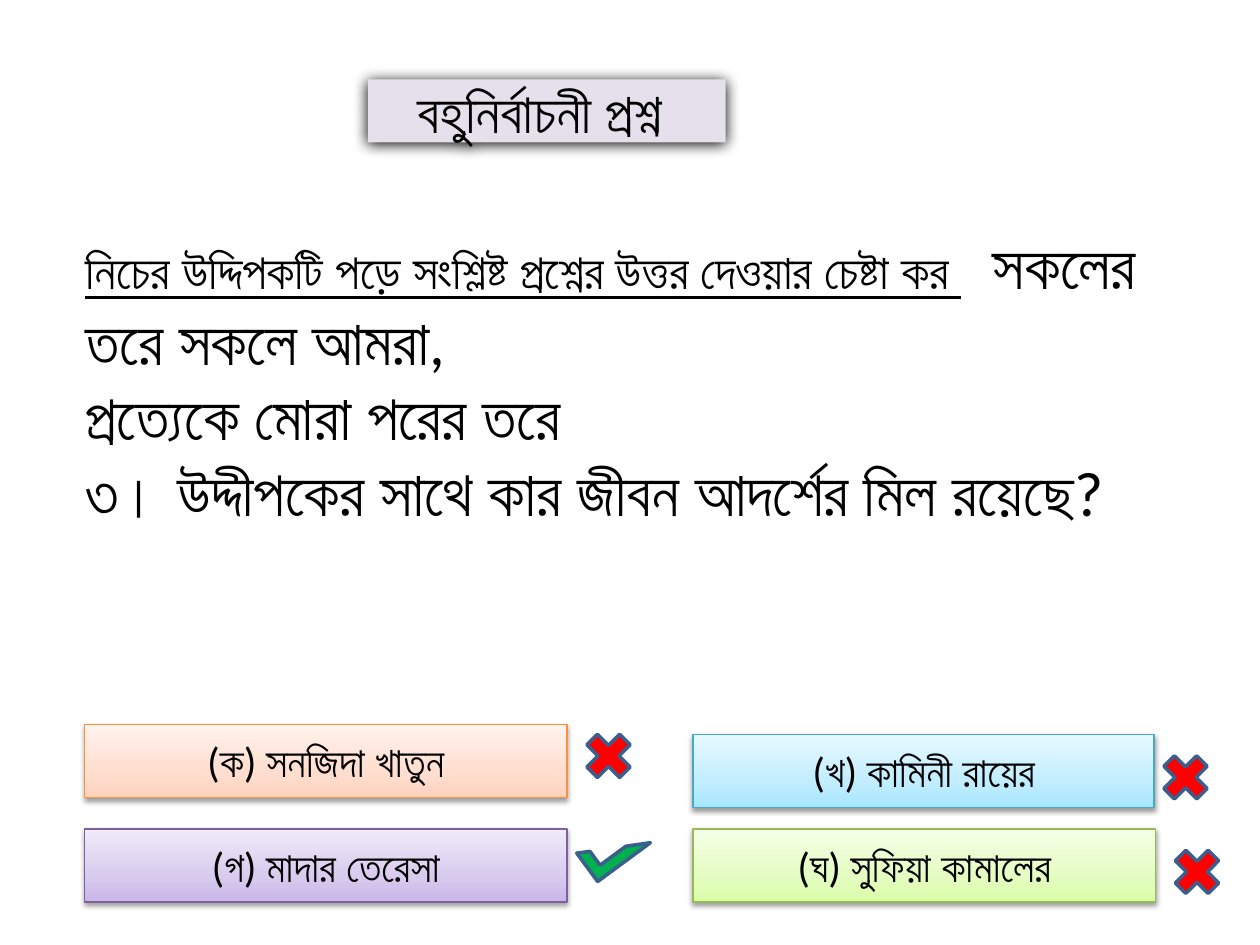
import copy
import pptx
import pptx.util
import pptx.dml.color
import pptx.enum.shapes
import pptx.enum.text
import pptx.oxml
import pptx.oxml.ns

Inches = pptx.util.Inches
Pt = pptx.util.Pt
SHAPE = pptx.enum.shapes.MSO_SHAPE
ALIGN = pptx.enum.text.PP_ALIGN
qn = pptx.oxml.ns.qn


def rgb(value):
    return pptx.dml.color.RGBColor.from_string(value)


def add_label(left, top, width, height, text, size, opacity, blur, distance):
    label = slide.shapes.add_shape(SHAPE.RECTANGLE, Inches(left), Inches(top), Inches(width), Inches(height))
    label.shadow.inherit = False
    label._element.spPr.find(qn("a:effectLst")).append(pptx.oxml.parse_xml(
        f'<a:outerShdw {pptx.oxml.ns.nsdecls("a")} blurRad="{Pt(blur)}" dist="{Pt(distance)}" '
        f'dir="5400000" rotWithShape="0"><a:srgbClr val="000000">'
        f'<a:alpha val="{opacity * 1000}"/></a:srgbClr></a:outerShdw>'))
    label.text_frame.text = text
    label.text_frame.vertical_anchor = pptx.enum.text.MSO_ANCHOR.MIDDLE
    paragraph = label.text_frame.paragraphs[0]
    paragraph.alignment = ALIGN.CENTER
    font = paragraph.runs[0].font
    font.name, font.size, font.color.rgb = "Calibri", Pt(size), rgb("000000")
    return label


prs = pptx.Presentation()
prs.slide_width, prs.slide_height = Inches(10), Inches(7.5)
slide = prs.slides.add_slide(prs.slide_layouts[6])

options = [
    (0.67, 5.75, 3.83, "(ক) সনজিদা খাতুন", "F69240", ["FFD2BD", "FFDED0", "FFF2ED"]),
    (5.5, 5.83, 3.66, "(খ) কামিনী রায়ের", "46AAC5", ["A7E6FF", "C1EDFF", "E7F8FF"]),
    (5.5, 6.58, 3.67, "(ঘ) সুফিয়া কামালের", "98B955", ["DAFDA7", "E4FCC2", "F5FFE7"]),
    (0.67, 6.58, 3.83, "(গ) মাদার তেরেসা", "7D60A0", ["C9B5E8", "D8CBEE", "F0EAF9"]),
]
for left, top, width, answer, border, shades in options:
    option = add_label(left, top, width, 0.58, answer, 24, 38, 3.1, 1.6)
    option.line.color.rgb, option.line.width = rgb(border), Pt(0.75)
    option.fill.gradient()
    option.fill.gradient_angle = 90
    stops = option._element.spPr.find(qn("a:gradFill")).find(qn("a:gsLst"))
    stops.append(copy.deepcopy(stops[-1]))
    for stop, position, shade in zip(option.fill.gradient_stops, (0, 0.35, 1), shades):
        stop.position, stop.color.rgb = position, rgb(shade)

marks = [
    (SHAPE.MATH_MULTIPLY, 9.16, 5.92, 0.5, 0.5, 0, "FF0000"),
    (SHAPE.HALF_FRAME, 4.73, 6.47, 0.28, 0.52, 233.6, "00B050"),
    (SHAPE.MATH_MULTIPLY, 4.58, 5.75, 0.5, 0.5, 0, "FF0000"),
    (SHAPE.MATH_MULTIPLY, 9.25, 6.67, 0.5, 0.5, 0, "FF0000"),
]
for kind, left, top, width, height, angle, color in marks:
    mark = slide.shapes.add_shape(kind, Inches(left), Inches(top), Inches(width), Inches(height))
    mark.shadow.inherit = False
    mark.rotation = angle
    mark.fill.solid()
    mark.fill.fore_color.rgb = rgb(color)
    mark.line.color.rgb, mark.line.width = rgb("3A5F8C"), Pt(2)

heading = add_label(2.92, 0.63, 2.84, 0.5, "বহুনির্বাচনী প্রশ্ন ", 32, 100, 8.5, 1)
heading.fill.solid()
heading.fill.fore_color.rgb = rgb("E6E0EC")
heading.line.fill.background()

question = slide.shapes.add_textbox(Inches(0.58), Inches(1.75), Inches(8.58), Inches(3.4)).text_frame
question.word_wrap = True
question.auto_size = pptx.enum.text.MSO_AUTO_SIZE.SHAPE_TO_FIT_TEXT
question.text = "\n".join([
    "নিচের উদ্দিপকটি পড়ে সংশ্লিষ্ট প্রশ্নের উত্তর দেওয়ার চেষ্টা কর ",
    "প্রত্যেকে মোরা পরের তরে",
    "৩। উদ্দীপকের সাথে কার জীবন আদর্শের মিল রয়েছে?",
])
instruction = question.paragraphs[0]
instruction.add_run().text = "  সকলের তরে সকলে আমরা,"
for paragraph in question.paragraphs:
    for run in paragraph.runs:
        run.font.name, run.font.size, run.font.color.rgb = "Calibri", Pt(36), rgb("000000")
for paragraph in question.paragraphs[1:]:
    paragraph.alignment = ALIGN.JUSTIFY
instruction.runs[0].font.size = Pt(28)
instruction.runs[0].font.underline = True

prs.save("out.pptx")
